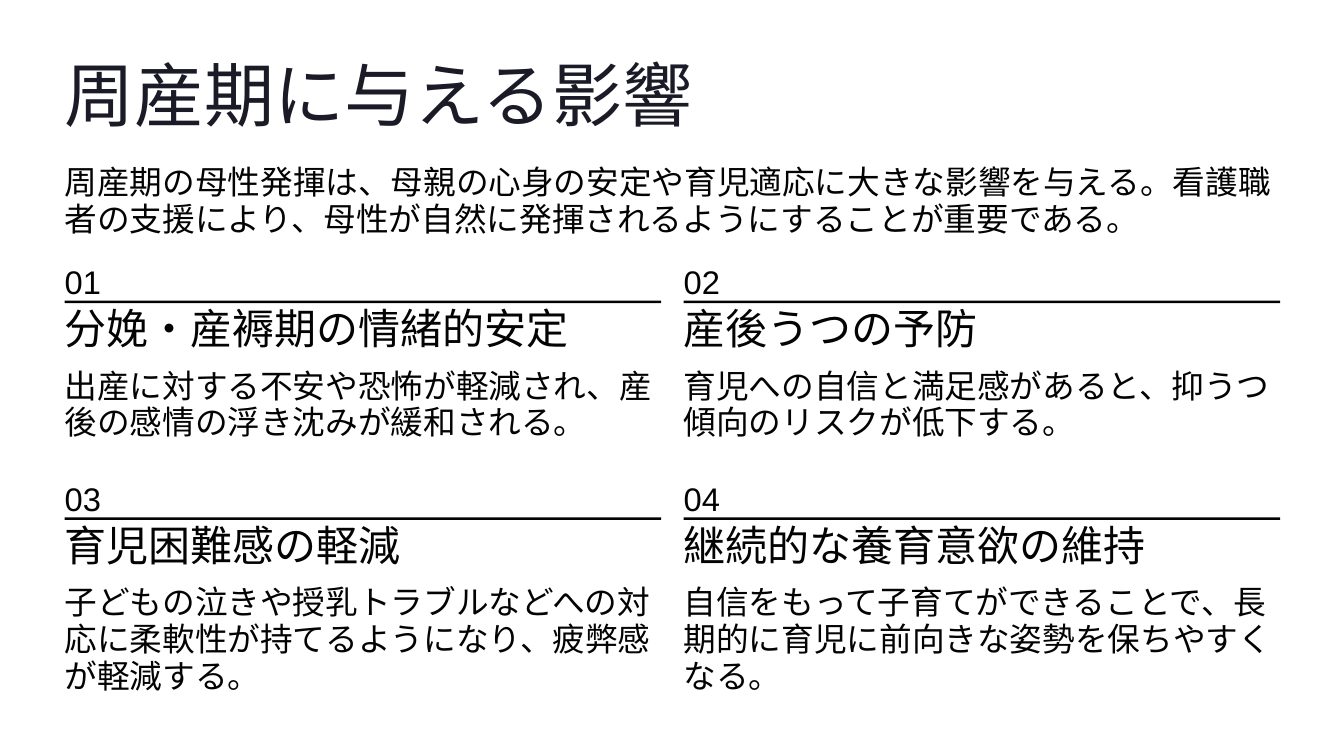
from dataclasses import dataclass

from lxml import etree
from pptx import Presentation
from pptx.dml.color import RGBColor
from pptx.enum.shapes import MSO_SHAPE
from pptx.enum.text import MSO_ANCHOR, MSO_AUTO_SIZE, PP_ALIGN
from pptx.oxml.ns import qn
from pptx.util import Emu, Pt

RECT = MSO_SHAPE.RECTANGLE
TOP = MSO_ANCHOR.TOP
LEFT = PP_ALIGN.LEFT
NO_AUTOFIT = MSO_AUTO_SIZE.NONE

PX = 9144  # 100 px to the inch
TITLE_AND_CONTENT = 1
MARGIN, FULL_W = 77, 1447
COL_W, COL_STEP = 710, 737
ROW_TOP, ROW_STEP = 315, 258


@dataclass(frozen=True)
class TextStyle:
    font: str
    size: int
    line: float
    color: RGBColor


@dataclass(frozen=True)
class Theme:
    ink: RGBColor = RGBColor(0x03, 0x03, 0x03)
    title: TextStyle = TextStyle("Inter", 60, 61.5, RGBColor(0x1B, 0x1B, 0x27))
    body: TextStyle = TextStyle("Karla", 28, 31.5, ink)
    number: TextStyle = TextStyle("Arial", 28, 31.5, ink)
    heading: TextStyle = TextStyle("Inter", 36, 30.5, ink)


@dataclass(frozen=True)
class Effect:
    heading: str
    text: str


THEME = Theme()
TITLE = "周産期に与える影響"
INTRO = (
    "周産期の母性発揮は、母親の心身の安定や育児適応に大きな影響を与える。"
    "看護職者の支援により、母性が自然に発揮されるようにすることが重要である。"
)
EFFECTS = [
    Effect("分娩・産褥期の情緒的安定",
           "出産に対する不安や恐怖が軽減され、産後の感情の浮き沈みが緩和される。"),
    Effect("産後うつの予防",
           "育児への自信と満足感があると、抑うつ傾向のリスクが低下する。"),
    Effect("育児困難感の軽減",
           "子どもの泣きや授乳トラブルなどへの対応に柔軟性が持てるようになり、疲弊感が軽減する。"),
    Effect("継続的な養育意欲の維持",
           "自信をもって子育てができることで、長期的に育児に前向きな姿勢を保ちやすくなる。"),
]


def px(n: int) -> Emu:
    return Emu(n * PX)


def place(sp, x: int, y: int, w: int, h: int) -> None:
    sp.left, sp.top, sp.width, sp.height = px(x), px(y), px(w), px(h)


def write(sp, text: str, style: TextStyle) -> None:
    tf = sp.text_frame
    tf.text = text
    tf.word_wrap = True
    tf.auto_size = NO_AUTOFIT
    tf.vertical_anchor = TOP
    tf.margin_left = tf.margin_top = tf.margin_right = tf.margin_bottom = 0
    p = tf.paragraphs[0]
    p.alignment = LEFT
    p.line_spacing = Pt(style.line)
    p.space_before = Pt(0)
    r = p.runs[0]
    r.font.name = style.font
    r.font.size = Pt(style.size)
    r.font.color.rgb = style.color


def remove_bullet(p) -> None:
    pPr = p._p.get_or_add_pPr()
    pPr.set("marL", "0")
    pPr.set("indent", "0")
    etree.SubElement(pPr, qn("a:buNone"))


def add_text(s, x: int, y: int, w: int, h: int, text: str, style: TextStyle) -> None:
    sp = s.shapes.add_textbox(px(x), px(y), px(w), px(h))
    write(sp, text, style)


def add_rule(s, x: int, y: int) -> None:
    sp = s.shapes.add_shape(RECT, px(x), px(y), px(COL_W), px(3))
    sp.shadow.inherit = False
    sp.fill.solid()
    sp.fill.fore_color.rgb = THEME.ink
    sp.line.fill.background()


def add_effect(s, index: int, effect: Effect) -> None:
    row, col = divmod(index, 2)
    x, y = MARGIN + col * COL_STEP, ROW_TOP + row * ROW_STEP
    add_text(s, x, y, COL_W, 34, f"{index + 1:02d}", THEME.number)
    add_rule(s, x, y + 43)
    add_text(s, x, y + 63, COL_W, 43, effect.heading, THEME.heading)
    add_text(s, x, y + 123, COL_W, 88, effect.text, THEME.body)


def main() -> None:
    prs = Presentation()
    prs.slide_width, prs.slide_height = px(1600), px(900)
    s = prs.slides.add_slide(prs.slide_layouts[TITLE_AND_CONTENT])

    title, intro = s.shapes.title, s.placeholders[1]
    place(title, MARGIN, 76, FULL_W, 86)
    write(title, TITLE, THEME.title)
    place(intro, MARGIN, 196, FULL_W, 88)
    write(intro, INTRO, THEME.body)
    remove_bullet(intro.text_frame.paragraphs[0])

    for index, effect in enumerate(EFFECTS):
        add_effect(s, index, effect)

    prs.save("out.pptx")


if __name__ == "__main__":
    main()
